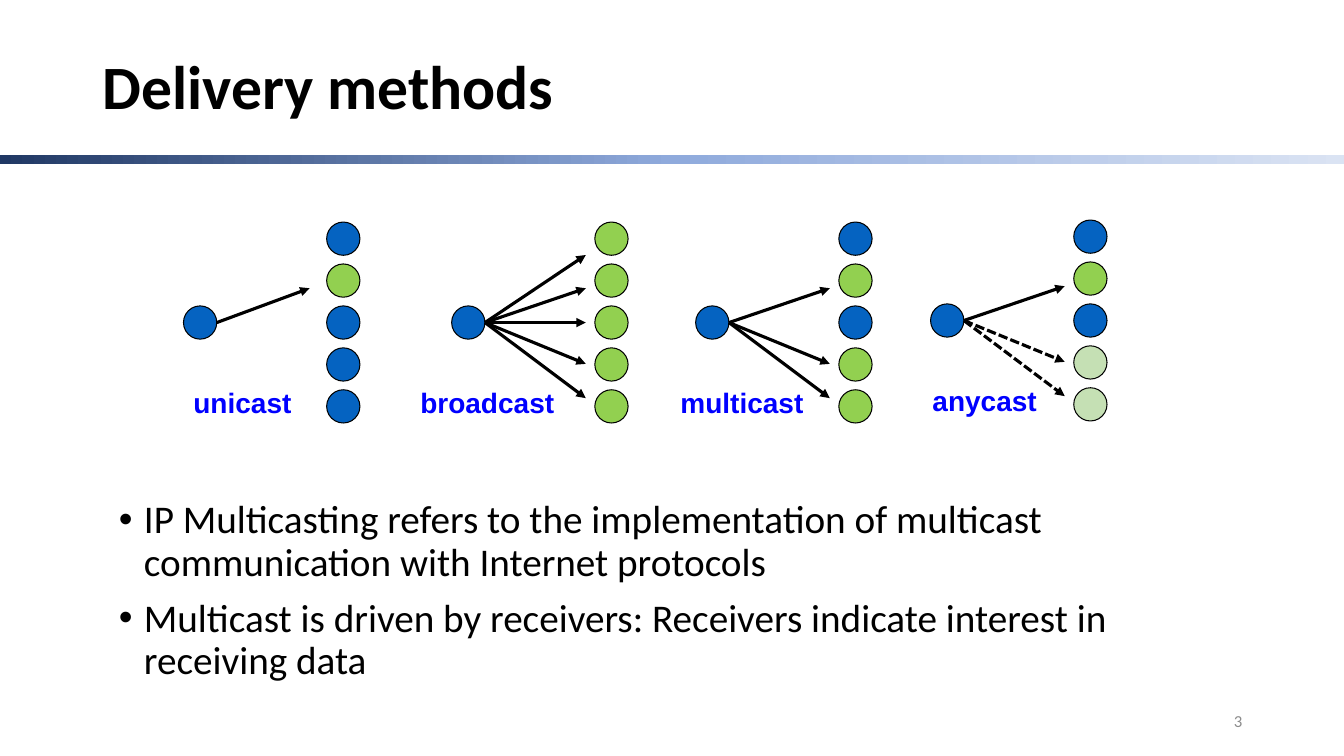
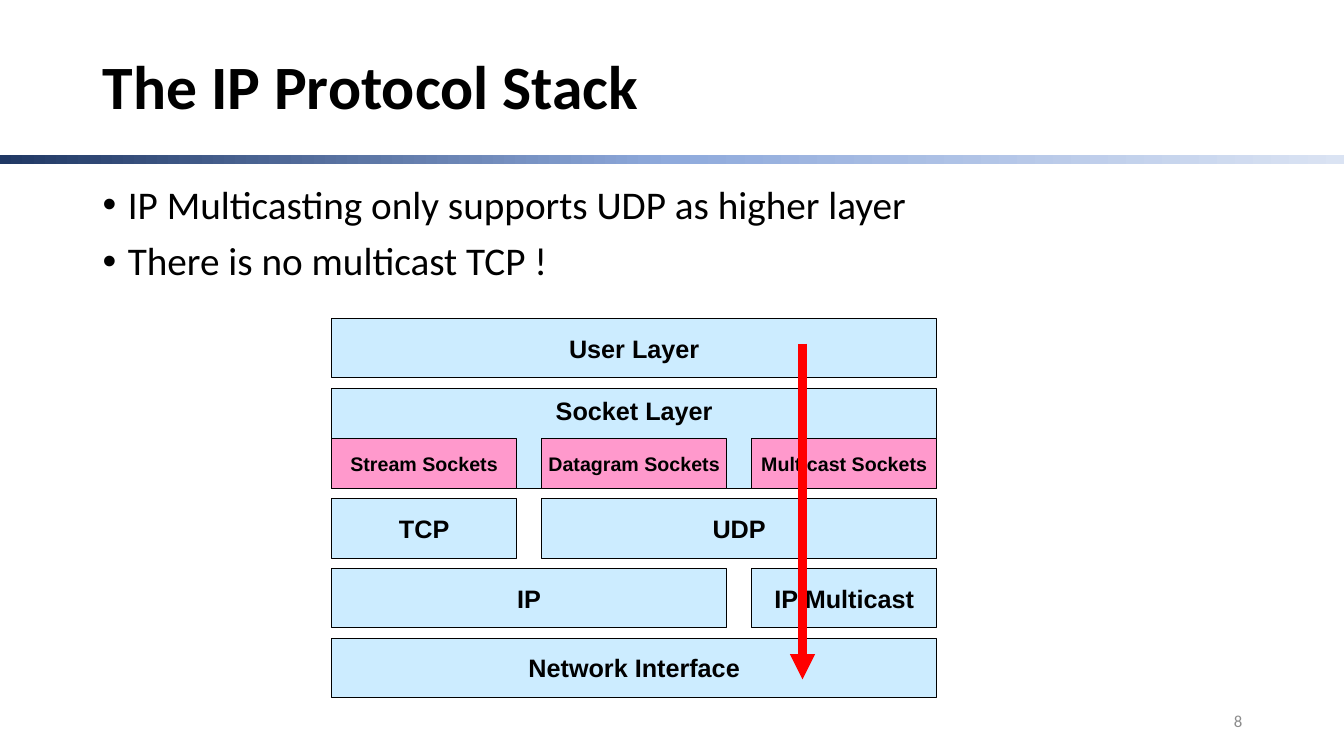
from copy import deepcopy

from pptx import Presentation
from pptx.dml.color import RGBColor
from pptx.enum.dml import MSO_LINE
from pptx.enum.shapes import MSO_CONNECTOR, MSO_SHAPE
from pptx.enum.text import MSO_ANCHOR, PP_ALIGN
from pptx.oxml.ns import qn
from pptx.util import Inches, Pt

RECT, OVAL = MSO_SHAPE.RECTANGLE, MSO_SHAPE.OVAL
STRAIGHT = MSO_CONNECTOR.STRAIGHT
DASHED = MSO_LINE.SQUARE_DOT
TOP, MIDDLE = MSO_ANCHOR.TOP, MSO_ANCHOR.MIDDLE
LEFT, CENTER, RIGHT = PP_ALIGN.LEFT, PP_ALIGN.CENTER, PP_ALIGN.RIGHT

COLORS = {
    "black": "000000", "label": "0000FF", "page": "8C8C8C", "path": "FF0000",
    "idle": "0563C1", "receiver": "92D050", "candidate": "C5E0B4",
    "layer": "CCECFF", "socket": "FF99CC",
}
BAND_STOPS = [(0, "203864"), (0.5, "8FAADC"), (1, "DAE3F3")]

# Delivery methods: node letters run from top to bottom
NODE_KINDS = {"I": "idle", "R": "receiver", "C": "candidate"}
METHODS = [
    # label, label left, label width, sender left, middle, nodes, arrow end
    ("unicast", 1.82, 1.33, 1.82, 3.2, "IRIII", 1.25),
    ("broadcast", 4.07, 1.67, 4.48, 3.2, "RRRRR", 1.33),
    ("multicast", 6.65, 1.67, 6.9, 3.2, "IRIRR", 1.33),
    ("anycast", 9.15, 1.67, 9.23, 3.18, "IRICC", 1.33),
]
NODE, NODE_PITCH, NODE_OFFSET = 0.33, 0.416, 1.42
ARROW_RISES = [-0.67, -0.34, 0, 0.41, 0.75]
DELIVERY_POINTS = [
    "IP Multicasting refers to the implementation of multicast "
    "communication with Internet protocols",
    "Multicast is driven by receivers: Receivers indicate interest in "
    "receiving data",
]

# Protocol stack: each row is a height and its (text, first column, columns)
STACK = [
    (0.59, [("User Layer", 0, 3)]),
    (1, [("Socket Layer", 0, 3)]),
    (0.59, [("TCP", 0, 1), ("UDP", 1, 2)]),
    (0.59, [("IP", 0, 2), ("IP Multicast", 2, 1)]),
    (0.59, [("Network Interface", 0, 3)]),
]
SOCKETS = ["Stream Sockets", "Datagram Sockets", "Multicast Sockets"]
STACK_LEFT, STACK_TOP, STACK_WIDTH = 3.29, 3.16, 6
COLUMN_GAP, ROW_GAP, SOCKET_HEIGHT = 0.25, 0.1, 0.5
COLUMN = (STACK_WIDTH - 2 * COLUMN_GAP) / 3
STACK_POINTS = [
    "IP Multicasting only supports UDP as higher layer",
    "There is no multicast TCP !",
]


def rgb(name):
    return RGBColor.from_string(COLORS[name])


def write(shape, lines, size, font="Calibri", color="black", bold=False,
          align=LEFT, anchor=TOP, wrap=True, spacing=None, bullets=False,
          top_inset=0.05):
    """Fill a shape with one formatted paragraph per line."""
    frame = shape.text_frame
    frame.word_wrap, frame.vertical_anchor = wrap, anchor
    frame.margin_top = Inches(top_inset)
    for i, line in enumerate(lines):
        paragraph = frame.add_paragraph() if i else frame.paragraphs[0]
        paragraph.alignment = align
        if spacing:
            paragraph.line_spacing = spacing
        if bullets:
            paragraph.space_before = Pt(10)
            props = paragraph._p.get_or_add_pPr()
            props.set("marL", str(Inches(0.25)))
            props.set("indent", str(Inches(-0.25)))
            bullet_font = props.makeelement(qn("a:buFont"), {"typeface": "Arial"})
            bullet = props.makeelement(qn("a:buChar"), {"char": "•"})
            props.extend([bullet_font, bullet])
        run = paragraph.add_run()
        run.text = line
        run.font.name, run.font.size, run.font.bold = font, Pt(size), bold
        run.font.color.rgb = rgb(color)


def add_text(slide, box, lines, size, **style):
    write(slide.shapes.add_textbox(*map(Inches, box)), lines, size, **style)


def add_bullets(slide, box, points):
    add_text(slide, box, points, 28, spacing=0.9, bullets=True)


def add_outlined(slide, kind, box, fill):
    shape = slide.shapes.add_shape(kind, *map(Inches, box))
    shape.shadow.inherit = False
    shape.fill.solid()
    shape.fill.fore_color.rgb = rgb(fill)
    shape.line.color.rgb = rgb("black")
    shape.line.width = Pt(0.75)
    return shape


def add_arrow(slide, start, end, color="black", width=2.25, dash=None):
    arrow = slide.shapes.add_connector(STRAIGHT, *map(Inches, start + end))
    arrow.line.color.rgb = rgb(color)
    arrow.line.width = Pt(width)
    if dash:
        arrow.line.dash_style = dash
    props = arrow._element.spPr
    line = props.find(qn("a:ln"))
    line.append(line.makeelement(qn("a:tailEnd"), {"type": "triangle"}))
    props.append(props.makeelement(qn("a:effectLst"), {}))


def add_band(slide):
    band = slide.shapes.add_shape(
        RECT, 0, Inches(1.54), Inches(13.33), Inches(0.09))
    band.shadow.inherit = False
    band.line.fill.background()
    band.fill.gradient()
    band.fill.gradient_angle = 0
    stops = next(band._element.iter(qn("a:gsLst")))
    stops.insert(1, deepcopy(stops[0]))
    for stop, (position, color) in zip(band.fill.gradient_stops, BAND_STOPS):
        stop.position = position
        stop.color.rgb = RGBColor.from_string(color)


def new_slide(deck, title, page):
    slide = deck.slides.add_slide(deck.slide_layouts[6])
    add_band(slide)
    add_text(slide, (0.92, 0.4, 11.5, 0.97), [title], 44, bold=True,
             anchor=MIDDLE, spacing=0.9)
    add_text(slide, (9.42, 6.95, 3, 0.4), [page], 12, color="page",
             align=RIGHT, anchor=MIDDLE)
    return slide


def add_method(slide, label, label_left, label_width, sender, middle, nodes, reach):
    """Draw a sender, its column of nodes and an arrow to each node reached."""
    node_top = middle - NODE / 2
    add_outlined(slide, OVAL, (sender, node_top, NODE, NODE), "idle")
    for row, letter in enumerate(nodes):
        kind = NODE_KINDS[letter]
        top = node_top + (row - 2) * NODE_PITCH
        add_outlined(slide, OVAL, (sender + NODE_OFFSET, top, NODE, NODE), kind)
        if kind != "idle":
            add_arrow(slide, (sender + NODE, middle),
                      (sender + reach, middle + ARROW_RISES[row]),
                      dash=DASHED if kind == "candidate" else None)
    add_text(slide, (label_left, middle + 0.58, label_width, 0.43), [label], 20,
             font="Arial", color="label", bold=True)


def add_block(slide, text, column, span, top, height, fill="layer", size=18,
              **style):
    left = STACK_LEFT + column * (COLUMN + COLUMN_GAP)
    width = span * COLUMN + (span - 1) * COLUMN_GAP
    block = add_outlined(slide, RECT, (left, top, width, height), fill)
    write(block, [text], size, font="Arial", bold=True, align=CENTER,
          wrap=False, **style)


def add_stack(slide):
    top = STACK_TOP
    for height, blocks in STACK:
        holds_sockets = height > SOCKET_HEIGHT * 1.5
        style = {"anchor": TOP, "top_inset": 0.07} if holds_sockets else {"anchor": MIDDLE}
        for text, column, span in blocks:
            add_block(slide, text, column, span, top, height, **style)
        if holds_sockets:
            for column, socket in enumerate(SOCKETS):
                add_block(slide, socket, column, 1, top + height - SOCKET_HEIGHT,
                          SOCKET_HEIGHT, "socket", 14, anchor=MIDDLE)
        top += height + ROW_GAP


def main():
    deck = Presentation()
    deck.slide_width, deck.slide_height = Inches(13.33), Inches(7.5)

    delivery = new_slide(deck, "Delivery methods", "3")
    for method in METHODS:
        add_method(delivery, *method)
    add_bullets(delivery, (1.08, 4.91, 11, 2.01), DELIVERY_POINTS)

    protocols = new_slide(deck, "The IP Protocol Stack", "8")
    add_bullets(protocols, (0.92, 1.79, 11.5, 1.3), STACK_POINTS)
    add_stack(protocols)
    add_arrow(protocols, (7.96, 3.41), (7.96, 6.74), color="path", width=6)

    deck.save("out.pptx")


if __name__ == "__main__":
    main()
